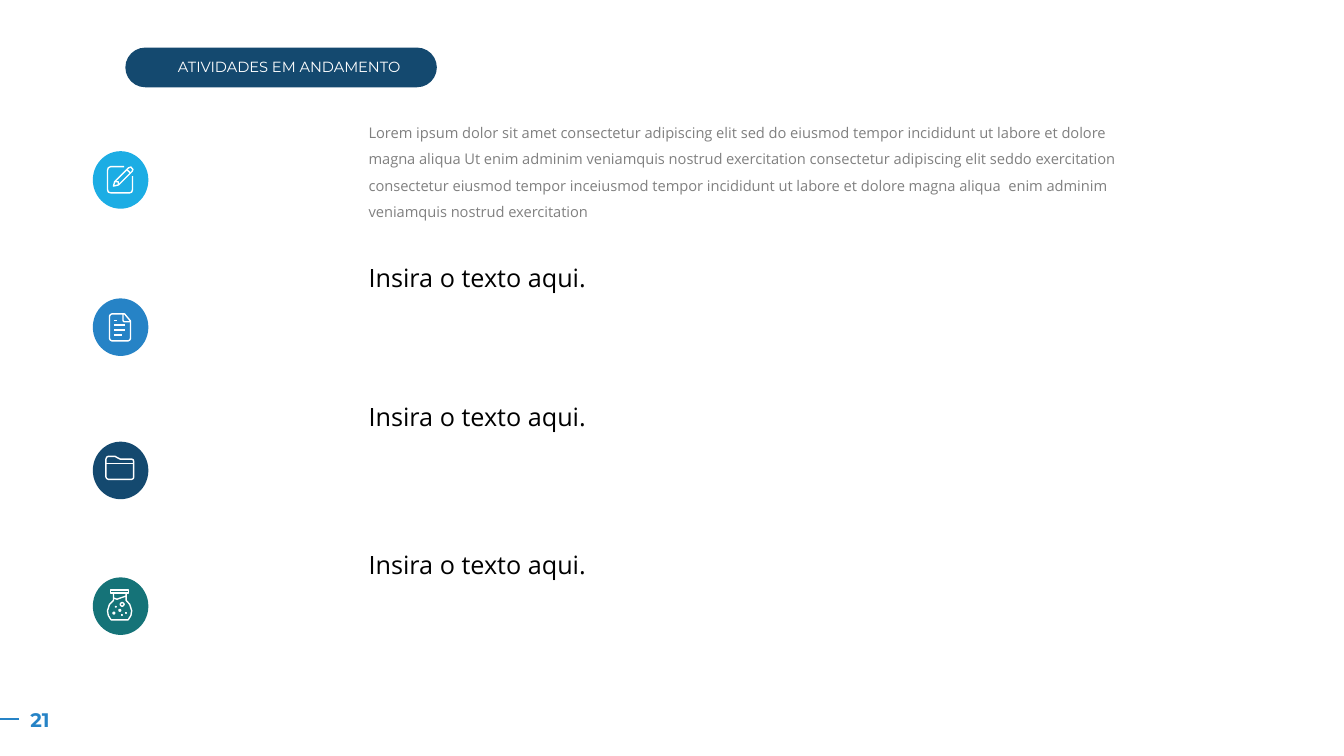
from dataclasses import dataclass
from math import cos, pi, sin

from lxml import etree
from pptx import Presentation
from pptx.dml.color import RGBColor
from pptx.enum import shapes, text
from pptx.oxml import ns
from pptx import util as u


@dataclass(frozen=True)
class Theme:
    heading_font: str = "Montserrat"
    body_font: str = "Open Sans"
    small: float = 10.5
    number: float = 14
    large: float = 18
    outline: float = 1
    rule: float = 1.5
    white: str = "FFFFFF"
    black: str = "000000"
    gray: str = "808080"
    sky: str = "1CADE4"
    blue: str = "2683C6"
    navy: str = "14496F"
    teal: str = "157378"


THEME = Theme()

TITLE = "ATIVIDADES EM ANDAMENTO"
PAGE_NUMBER = "21"
INTRO = (
    "Lorem ipsum dolor sit amet consectetur adipiscing elit sed do eiusmod tempor "
    "incididunt ut labore et dolore magna aliqua Ut enim adminim veniamquis nostrud "
    "exercitation consectetur adipiscing elit seddo exercitation consectetur eiusmod "
    "tempor inceiusmod tempor incididunt ut labore et dolore magna aliqua  enim adminim "
    "veniamquis nostrud exercitation"
)
PROMPT = "Insira o texto aqui."


def bubble(x, y, radius):
    angles = [step * pi / 6 for step in range(12)]
    return [(x + radius * cos(a), y + radius * sin(a)) for a in angles], True


PENCIL = [
    ([(79, 39), (45, 39), (39, 42), (37, 48), (37, 97), (39, 103), (45, 105),
      (93, 105), (98, 103), (100, 97), (100, 63)], False),
    ([(52, 88), (55, 77), (90, 42), (96, 40), (101, 46), (99, 51), (65, 85)], True),
    ([(55, 77), (64, 77), (65, 85)], False),
    ([(86, 47), (95, 55)], False),
]
DOCUMENT = [
    ([(80, 39), (48, 39), (44, 41), (42, 45), (42, 101), (44, 105), (48, 107),
      (89, 107), (93, 105), (95, 101), (95, 57)], True),
    ([(76, 39), (76, 56), (79, 59), (95, 59)], False),
    ([(53, 55), (62, 55)], False),
    ([(53, 67), (82, 67)], False),
    ([(53, 80), (82, 80)], False),
    ([(53, 92), (74, 92)], False),
]
FOLDER = [
    ([(33, 44), (35, 39), (39, 37), (56, 37), (63, 41), (69, 44), (98, 44),
      (102, 46), (103, 50), (103, 89), (102, 93), (98, 95), (39, 95), (35, 93),
      (33, 89)], True),
    ([(33, 55), (103, 55)], False),
]
FLASK = [
    ([(44, 32), (90, 32), (90, 39), (44, 39)], True),
    ([(52, 39), (52, 58), (42, 68), (37, 84), (39, 96), (46, 107), (89, 107),
      (96, 96), (98, 84), (93, 68), (84, 58), (84, 39)], False),
    ([(52, 52), (61, 55), (72, 51), (84, 47)], False),
    bubble(74, 68, 5),
    bubble(68, 83, 2),
    bubble(53, 90, 2),
    bubble(84, 89, 1),
    bubble(73, 95, 1),
    bubble(58, 74, 1),
]

BADGES = [
    (3.81, THEME.sky, PENCIL),
    (7.52, THEME.blue, DOCUMENT),
    (11.13, THEME.navy, FOLDER),
    (14.55, THEME.teal, FLASK),
]
BADGE_LEFT, BADGE_WIDTH, BADGE_HEIGHT = 2.34, 1.4, 1.45
BODY_LEFT, BODY_WIDTH, BODY_HEIGHT = 9.04, 19.56, 2.87
BODY_TEXTS = [
    (2.77, INTRO, THEME.small, THEME.gray, 1.5),
    (6.48, PROMPT, THEME.large, THEME.black, 1),
    (9.98, PROMPT, THEME.large, THEME.black, 1),
    (13.72, PROMPT, THEME.large, THEME.black, 1),
]


def place(shape, left, top, width, height):
    shape.left, shape.top = u.Cm(left), u.Cm(top)
    shape.width, shape.height = u.Cm(width), u.Cm(height)


def write(box, words, font, size, color, align=text.PP_ALIGN.LEFT, spacing=1,
          anchor=text.MSO_ANCHOR.TOP, bold=False):
    frame = box.text_frame
    frame.word_wrap = True
    frame.auto_size = text.MSO_AUTO_SIZE.NONE
    frame.vertical_anchor = anchor
    para = frame.paragraphs[0]
    para.alignment = align
    para.line_spacing = spacing
    span = para.add_run()
    span.text = words
    span.font.name = font
    span.font.size = u.Pt(size)
    span.font.bold = bold
    span.font.color.rgb = RGBColor.from_string(color)


def add_text(page, left, top, width, height, *content, **style):
    box = page.shapes.add_textbox(*map(u.Cm, (left, top, width, height)))
    write(box, *content, **style)


def add_solid(page, kind, left, top, width, height, color):
    shape = page.shapes.add_shape(kind, *map(u.Cm, (left, top, width, height)))
    shape.shadow.inherit = False
    shape.fill.solid()
    shape.fill.fore_color.rgb = RGBColor.from_string(color)
    shape.line.fill.background()
    return shape


def add_icon(page, strokes, left, top):
    builder = page.shapes.build_freeform(*strokes[0][0][0], scale=u.Cm(0.01))
    for index, (points, closed) in enumerate(strokes):
        if index:
            builder.move_to(*points[0])
        builder.add_line_segments(points[1:], close=closed)
    icon = builder.convert_to_shape(u.Cm(left), u.Cm(top))
    icon.shadow.inherit = False
    icon.fill.background()
    icon.line.color.rgb = RGBColor.from_string(THEME.white)
    icon.line.width = u.Pt(THEME.outline)


def add_page_number(page):
    add_text(page, 0.3, 17.7, 1.42, 0.86, PAGE_NUMBER, THEME.heading_font,
             THEME.number, THEME.blue, align=text.PP_ALIGN.CENTER,
             anchor=text.MSO_ANCHOR.MIDDLE, bold=True)
    rule = page.shapes.add_connector(
        shapes.MSO_CONNECTOR.STRAIGHT, *map(u.Cm, (0.48, 18.11, 0, 18.11)))
    rule.line.color.rgb = RGBColor.from_string(THEME.blue)
    rule.line.width = u.Pt(THEME.rule)
    etree.SubElement(rule._element.spPr, ns.qn("a:effectLst"))


def add_title(page):
    pill = add_solid(page, shapes.MSO_SHAPE.ROUNDED_RECTANGLE,
                     3.16, 1.2, 7.85, 1, THEME.navy)
    pill.adjustments[0] = 0.5
    title = page.shapes.title
    place(title, 3.58, 1.32, 7.42, 0.71)
    write(title, TITLE, THEME.heading_font, THEME.small, THEME.white,
          align=text.PP_ALIGN.CENTER)
    pill._element.addnext(title._element)


def main():
    deck = Presentation()
    deck.slide_width, deck.slide_height = u.Cm(33.87), u.Cm(19.05)
    page = deck.slides.add_slide(deck.slide_layouts[5])
    add_page_number(page)
    add_title(page)
    for top, color, strokes in BADGES:
        add_solid(page, shapes.MSO_SHAPE.OVAL, BADGE_LEFT, top,
                  BADGE_WIDTH, BADGE_HEIGHT, color)
        add_icon(page, strokes, BADGE_LEFT, top)
    for top, words, size, color, spacing in BODY_TEXTS:
        add_text(page, BODY_LEFT, top, BODY_WIDTH, BODY_HEIGHT, words,
                 THEME.body_font, size, color, spacing=spacing)
    deck.save("out.pptx")


if __name__ == "__main__":
    main()
